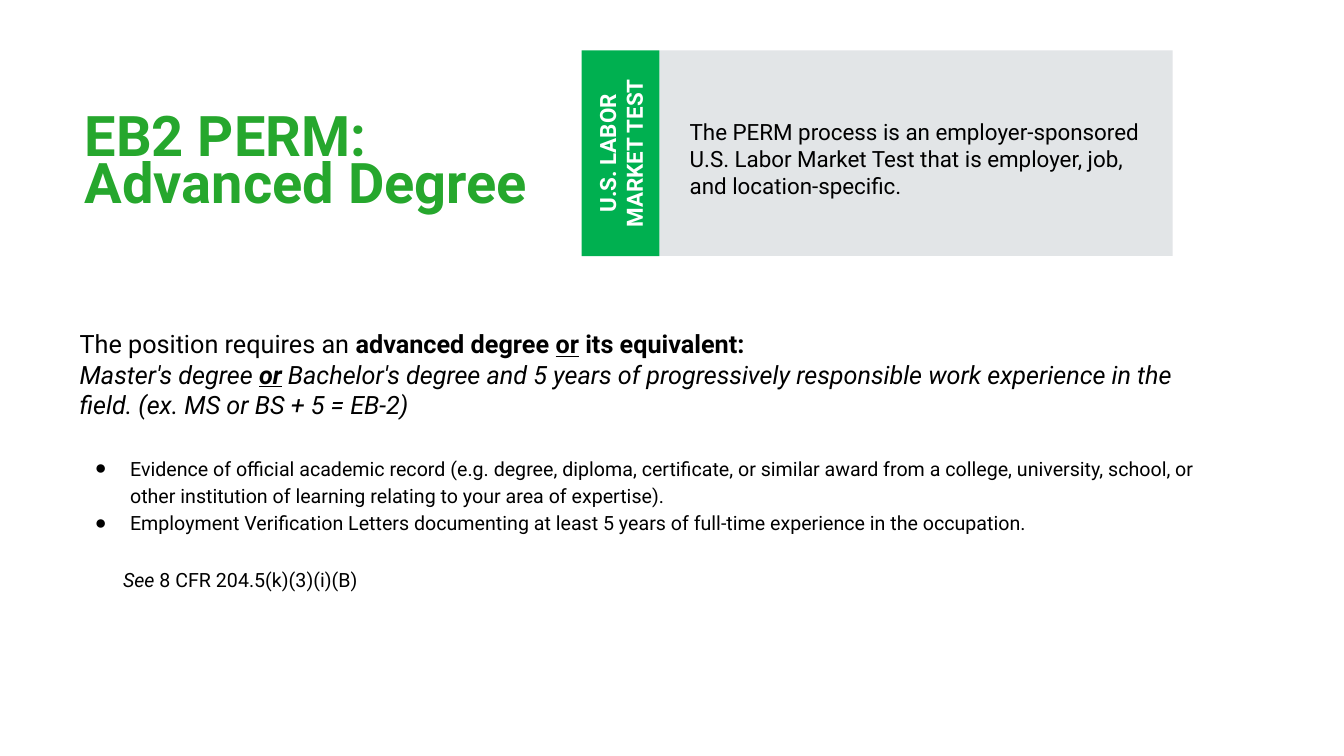
from lxml import etree
from pptx import Presentation
from pptx.dml.color import RGBColor
from pptx.enum.shapes import MSO_SHAPE
from pptx.enum.text import MSO_ANCHOR, MSO_AUTO_SIZE, PP_ALIGN
from pptx.oxml.ns import qn
from pptx.util import Inches, Pt

RECT = MSO_SHAPE.RECTANGLE
TOP, MIDDLE = MSO_ANCHOR.TOP, MSO_ANCHOR.MIDDLE
LEFT, CENTER = PP_ALIGN.LEFT, PP_ALIGN.CENTER
FIXED = MSO_AUTO_SIZE.NONE

WHITE = RGBColor(0xFF, 0xFF, 0xFF)
BLACK = RGBColor(0, 0, 0)
LIME = RGBColor(0x26, 0xA7, 0x2D)
GREEN = RGBColor(0x00, 0xB0, 0x50)
GRAY = RGBColor(0xDF, 0xE3, 0xE5)

INTRO = [
    [("The position requires an ", ""), ("advanced degree ", "b"),
     ("or", "bu"), (" its equivalent:", "b")],
    [("Master's degree ", "i"), ("or", "biu"),
     (" Bachelor's degree and 5 years of progressively responsible work "
      "experience in the field. (ex. MS or BS + 5 = EB-2)", "i")],
]
PROOF = [
    "Evidence of official academic record (e.g. degree, diploma, certificate, "
    "or similar award from a college, university, school, or other "
    "institution of learning relating to your area of expertise).",
    "Employment Verification Letters documenting at least 5 years of "
    "full-time experience in the occupation.",
]
CITE = [("See", "i"), (" 8 CFR 204.5(k)(3)(i)(B)", "")]


def place(shape, box):
    shape.left, shape.top, shape.width, shape.height = map(Inches, box)


def set_frame(frame, pads, anchor):
    frame.word_wrap = True
    frame.auto_size = FIXED
    frame.vertical_anchor = anchor
    (frame.margin_left, frame.margin_top,
     frame.margin_right, frame.margin_bottom) = map(Inches, pads)


def add_runs(para, runs, size, color=BLACK):
    for text, style in runs:
        run = para.add_run()
        run.text = text
        font = run.font
        font.name, font.size = "Roboto", Pt(size)
        font.color.rgb = color
        font.bold, font.italic = "b" in style, "i" in style
        font.underline = "u" in style


def set_mark(para, mark, margin, indent):
    props = para._p.get_or_add_pPr()
    props.set("marL", str(Inches(margin)))
    props.set("indent", str(Inches(indent)))
    if mark:
        etree.SubElement(props, qn("a:buChar")).set("char", mark)
    else:
        etree.SubElement(props, qn("a:buNone"))


def add_title(slide, box):
    title = slide.shapes.title
    place(title, box)
    set_frame(title.text_frame, (0, 0.05, 0, 0), TOP)
    para = title.text_frame.paragraphs[0]
    para.alignment = LEFT
    para.line_spacing = 0.7
    add_runs(para, [("EB2 PERM: Advanced Degree", "b")], 40, LIME)


def add_block(slide, box, fill, pads, align, runs, color):
    block = slide.shapes.add_shape(RECT, *map(Inches, box))
    block.shadow.inherit = False
    block.fill.solid()
    block.fill.fore_color.rgb = fill
    block.line.fill.background()
    set_frame(block.text_frame, pads, MIDDLE)
    para = block.text_frame.paragraphs[0]
    para.alignment = align
    add_runs(para, runs, 16, color)
    return block


def add_banner(slide, box):
    left, top, width, height = box
    tab = 0.77
    panel = add_block(
        slide, (left + tab, top, width - tab, height), GRAY,
        (0.3, 0.1, 0.3, 0), LEFT,
        [("The PERM process is an employer-sponsored U.S. Labor Market Test "
          "that is employer, job, and location-specific.", "")], BLACK)
    tint = panel.fill._xPr.find(".//" + qn("a:srgbClr"))
    etree.SubElement(tint, qn("a:alpha")).set("val", "90000")
    shift = (height - tab) / 2
    label = add_block(
        slide, (left - shift, top + shift, height, tab), GREEN,
        (0, 0, 0, 0), CENTER, [("U.S. LABOR MARKET TEST", "b")], WHITE)
    label.rotation = 270


def add_body(slide, box):
    body = slide.placeholders[1]
    place(body, box)
    frame = body.text_frame
    set_frame(frame, (0.1, 0.05, 0.1, 0.05), TOP)
    rows = [(runs, 18, "", 0, 0, 1, 0) for runs in INTRO]
    rows += [([(text, "")], 14, "●", 0.5, -0.35, 1.15, gap)
             for text, gap in zip(PROOF, (24, 0))]
    rows.append((CITE, 14, "", 0.43, 0, 1.15, 22))
    for num, (runs, size, mark, margin, indent, line, gap) in enumerate(rows):
        para = frame.add_paragraph() if num else frame.paragraphs[0]
        set_mark(para, mark, margin, indent)
        para.line_spacing = line
        para.space_before = Pt(gap)
        add_runs(para, runs, size)


def main():
    deck = Presentation()
    deck.slide_width, deck.slide_height = Inches(13.33), Inches(7.5)
    slide = deck.slides.add_slide(deck.slide_layouts[1])
    slide.background.fill.solid()
    slide.background.fill.fore_color.rgb = WHITE
    add_body(slide, (0.69, 3.21, 11.39, 3.56))
    add_title(slide, (0.84, 1.13, 4.82, 0.79))
    add_banner(slide, (5.77, 0.5, 5.86, 2.04))
    deck.save("out.pptx")


if __name__ == "__main__":
    main()
